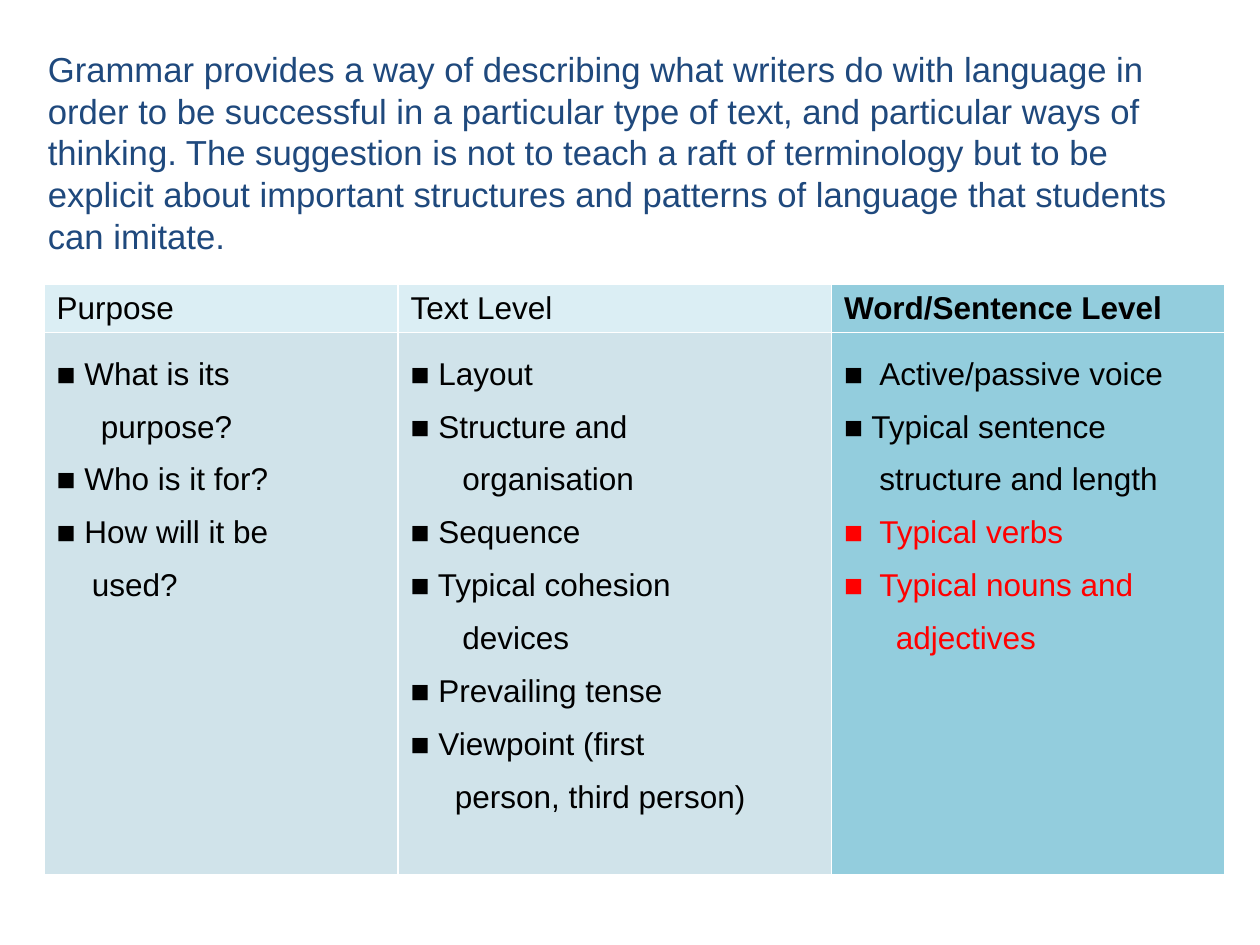
from lxml import etree
from pptx import Presentation
from pptx import util as u
from pptx.dml.color import RGBColor
from pptx.enum import text
from pptx.oxml import ns

NAVY = RGBColor(0x1F, 0x49, 0x7D)
BLACK = RGBColor(0, 0, 0)
RED = RGBColor(0xFF, 0, 0)
WHITE = RGBColor(0xFF, 0xFF, 0xFF)
PALE = RGBColor(0xDB, 0xEE, 0xF4)
GREY_BLUE = RGBColor(0xD0, 0xE3, 0xEA)
TEAL = RGBColor(0x93, 0xCD, 0xDD)

INTRODUCTION = (
    "Grammar provides a way of describing what writers do with language in order to be "
    "successful in a particular type of text, and particular ways of thinking. The suggestion "
    "is not to teach a raft of terminology but to be explicit about important structures and "
    "patterns of language that students can imitate."
)
HANGING = 0.28
COLUMNS = [
    ("Purpose", 2.81, PALE, GREY_BLUE, False, [
        ("■ What is its", 0, BLACK),
        ("purpose?", 0.35, BLACK),
        ("■ Who is it for?", 0, BLACK),
        ("■ How will it be", 0, BLACK),
        ("used?", 0.28, BLACK),
    ]),
    ("Text Level", 3.44, PALE, GREY_BLUE, False, [
        ("■ Layout", 0, BLACK),
        ("■ Structure and", 0, BLACK),
        ("organisation", 0.41, BLACK),
        ("■ Sequence", 0, BLACK),
        ("■ Typical cohesion", 0, BLACK),
        ("devices", 0.41, BLACK),
        ("■ Prevailing tense", 0, BLACK),
        ("■ Viewpoint (first", 0, BLACK),
        ("person, third person)", 0.35, BLACK),
    ]),
    ("Word/Sentence Level", 3.12, TEAL, TEAL, True, [
        ("■\tActive/passive voice", HANGING, BLACK),
        ("■ Typical sentence", 0, BLACK),
        ("structure and length", 0.28, BLACK),
        ("■\tTypical verbs", HANGING, RED),
        ("■\tTypical nouns and", HANGING, RED),
        ("adjectives", 0.41, RED),
    ]),
]


class SlideBuilder:
    """Holds the style and the current slide, and adds each kind of element."""

    def __init__(self, slide, font="Arial", size=18):
        self.slide = slide
        self.font = font
        self.size = size

    def add_run(self, paragraph, content, color, size=None, bold=False):
        run = paragraph.add_run()
        run.text = content
        run.font.name = self.font
        run.font.size = u.Pt(size or self.size)
        run.font.bold = bold
        run.font.color.rgb = color

    def title(self, content):
        title = self.slide.shapes.title
        title.left, title.top = u.Inches(0.28), u.Inches(0.84)
        title.width, title.height = u.Inches(9.42), u.Inches(1.8)
        frame = title.text_frame
        frame.word_wrap = True
        frame.auto_size = text.MSO_AUTO_SIZE.NONE
        frame.vertical_anchor = text.MSO_ANCHOR.MIDDLE
        frame.margin_bottom = u.Inches(1.12)
        paragraph = frame.paragraphs[0]
        paragraph.alignment = text.PP_ALIGN.LEFT
        paragraph.line_spacing = u.Pt(23.8)
        self.add_run(paragraph, content, NAVY, 19.8)

    def style_cell(self, cell, fill, bottom_width=1):
        cell.fill.solid()
        cell.fill.fore_color.rgb = fill
        properties = cell._tc.get_or_add_tcPr()
        widths = (("a:lnL", 1), ("a:lnR", 1), ("a:lnT", 1), ("a:lnB", bottom_width))
        for position, (tag, width) in enumerate(widths):
            line = etree.Element(ns.qn(tag), w=str(u.Pt(width)))
            solid = etree.SubElement(line, ns.qn("a:solidFill"))
            etree.SubElement(solid, ns.qn("a:srgbClr"), val=str(WHITE))
            properties.insert(position, line)

    def indent(self, paragraph, inches, hanging):
        properties = paragraph._p.get_or_add_pPr()
        properties.set("marL", str(u.Inches(inches)))
        properties.set("indent", str(u.Inches(-inches) if hanging else 0))

    def table(self, columns):
        total_width = sum(column[1] for column in columns)
        frame = self.slide.shapes.add_table(
            2, len(columns), u.Inches(0.35), u.Inches(2.26),
            u.Inches(total_width), u.Inches(4.67))
        table = frame.table
        table.rows[0].height, table.rows[1].height = u.Inches(0.37), u.Inches(4.3)
        for index, (heading, width, head_fill, body_fill, bold, lines) in enumerate(columns):
            table.columns[index].width = u.Inches(width)
            head, body = table.cell(0, index), table.cell(1, index)
            self.style_cell(head, head_fill)
            self.style_cell(body, body_fill)
            self.add_run(head.text_frame.paragraphs[0], heading, BLACK, bold=bold)
            for number, (content, inches, color) in enumerate(lines):
                frame = body.text_frame
                paragraph = frame.add_paragraph() if number else frame.paragraphs[0]
                paragraph.line_spacing = 1.5
                self.indent(paragraph, inches, "\t" in content)
                self.add_run(paragraph, content, color)


def main():
    presentation = Presentation()
    presentation.slide_width, presentation.slide_height = u.Inches(10), u.Inches(7.5)
    builder = SlideBuilder(presentation.slides.add_slide(presentation.slide_layouts[5]))
    builder.title(INTRODUCTION)
    builder.table(COLUMNS)
    presentation.save("out.pptx")


if __name__ == "__main__":
    main()
